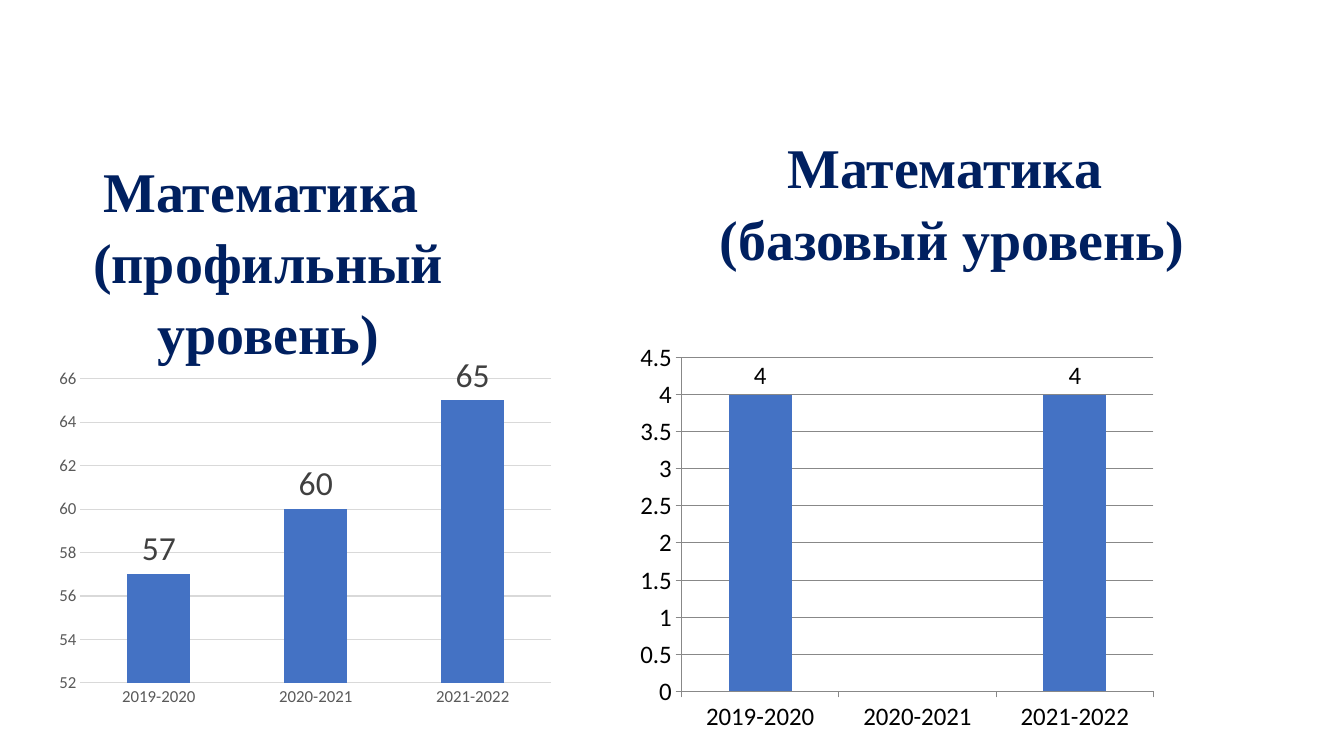
from lxml import etree
from pptx import Presentation
from pptx.chart.data import CategoryChartData
from pptx.dml.color import RGBColor
from pptx.enum.chart import XL_CHART_TYPE as ChartType
from pptx.enum.chart import XL_LABEL_POSITION as LabelPos
from pptx.enum.chart import XL_TICK_MARK as Tick
from pptx.enum.text import MSO_ANCHOR, MSO_AUTO_SIZE, PP_ALIGN
from pptx.oxml.ns import qn
from pptx.util import Inches, Pt

COLORS = {"navy": "002060", "bar": "4472C4", "black": "000000",
          "label": "404040", "axis": "595959", "line": "888888", "grid": "D9D9D9"}
YEARS = ["2019-2020", "2020-2021", "2021-2022"]


def color(name):
    return RGBColor.from_string(COLORS[name])


def set_font(font, size, name="Calibri", fill="black", bold=False):
    font.size, font.name, font.bold = Pt(size), name, bold
    font.color.rgb = color(fill)


def add_text(tf, text, align=PP_ALIGN.CENTER, spacing=1.06, **fmt):
    """Fill the frame with one paragraph per line of text."""
    for i, line in enumerate(text.split("\n")):
        p = tf.paragraphs[0] if i == 0 else tf.add_paragraph()
        p.alignment, p.line_spacing = align, spacing
        r = p.add_run()
        r.text = line
        set_font(r.font, **fmt)


def set_plot_area(chart, x, y, w, h):
    """Fix the inner plot area as fractions of the chart."""
    area = chart.element.find(".//" + qn("c:plotArea"))
    for old in area.findall(qn("c:layout")):
        area.remove(old)
    layout = etree.Element(qn("c:layout"))
    manual = etree.SubElement(layout, qn("c:manualLayout"))
    settings = {"layoutTarget": "inner", "xMode": "edge", "yMode": "edge",
                "x": x, "y": y, "w": w, "h": h}
    for tag, value in settings.items():
        etree.SubElement(manual, qn("c:" + tag)).set("val", str(value))
    area.insert(0, layout)


class SlideBuilder:
    def __init__(self, slide):
        self.slide = slide
        self.heading_style = dict(size=40, name="Times New Roman", fill="navy", bold=True)

    def heading(self, sp, text, left, top, width, height):
        sp.left, sp.top = Inches(left), Inches(top)
        sp.width, sp.height = Inches(width), Inches(height)
        tf = sp.text_frame
        tf.word_wrap = True
        tf.auto_size = MSO_AUTO_SIZE.SHAPE_TO_FIT_TEXT
        tf.vertical_anchor = MSO_ANCHOR.TOP
        add_text(tf, text, **self.heading_style)

    def title(self, text, *box):
        self.heading(self.slide.shapes.title, text, *box)

    def subtitle(self, text, *box):
        sp = self.slide.shapes.add_textbox(*map(Inches, box))
        self.heading(sp, text, *box)

    def column_chart(self, values, box, plot, scale, axis_size, label_size,
                     axis_fill="black", label_fill="black", grid="line", axis_line=None):
        """Draw columns by year; scale is (minimum, maximum, step)."""
        data = CategoryChartData()
        data.categories = YEARS
        data.add_series("Series 1", values)
        chart = self.slide.shapes.add_chart(
            ChartType.COLUMN_CLUSTERED, *map(Inches, box), data).chart
        chart.has_title = chart.has_legend = False
        set_font(chart.font, axis_size)
        set_plot_area(chart, *plot)

        for axis in (chart.category_axis, chart.value_axis):
            axis.major_tick_mark = Tick.OUTSIDE if axis_line else Tick.NONE
            axis.minor_tick_mark = Tick.NONE
            set_font(axis.tick_labels.font, axis_size, fill=axis_fill)
            line = axis.format.line
            if axis_line:
                line.color.rgb, line.width = color(axis_line), Pt(0.75)
            else:
                line.fill.background()
        axis = chart.value_axis
        axis.minimum_scale, axis.maximum_scale, axis.major_unit = scale
        axis.has_major_gridlines = True
        line = axis.major_gridlines.format.line
        line.color.rgb, line.width = color(grid), Pt(0.75)

        bars = chart.plots[0]
        bars.gap_width, bars.vary_by_categories = 150, False
        fill = bars.series[0].format.fill
        fill.solid()
        fill.fore_color.rgb = color("bar")
        bars.has_data_labels = True
        labels = bars.data_labels
        labels.show_value, labels.position = True, LabelPos.OUTSIDE_END
        set_font(labels.font, label_size, fill=label_fill)


def main():
    prs = Presentation()
    prs.slide_width, prs.slide_height = Inches(13.33), Inches(7.5)
    s = SlideBuilder(prs.slides.add_slide(prs.slide_layouts[5]))

    s.column_chart([57, 60, 65], (0.45, 3.41, 5.98, 3.7), (0.058, 0.094, 0.781, 0.816),
                   (52, 66, 2), axis_size=12, label_size=24,
                   axis_fill="axis", label_fill="label", grid="grid")
    s.subtitle("Математика \n(базовый уровень)", 6.45, 1.23, 5.98, 1.45)
    s.column_chart([4, None, 4], (6.35, 3.32, 6.08, 4.06), (0.054, 0.056, 0.781, 0.816),
                   (0, 4.5, 0.5), axis_size=18, label_size=18, axis_line="line")
    s.title("Математика \n(профильный уровень)", -0.33, 1.46, 5.98, 2.12)

    prs.save("out.pptx")


if __name__ == "__main__":
    main()
